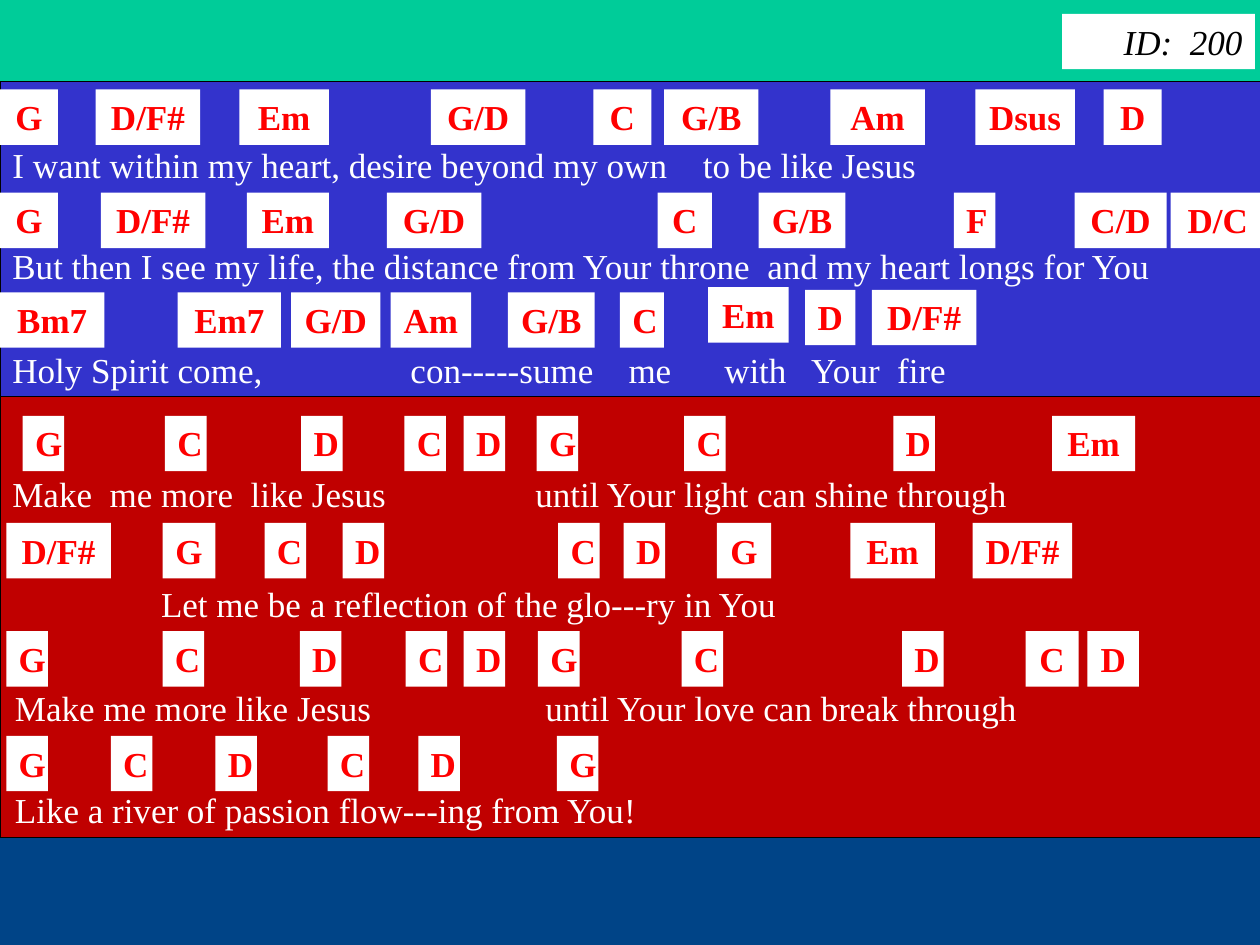
import pptx
import pptx.util
import pptx.dml.color
import pptx.enum.shapes
import pptx.enum.text
import pptx.oxml.ns
from lxml import etree

COLORS = {
    "page": "004487", "header": "00CC99", "verse": "3333CC", "chorus": "C00000",
    "white": "FFFFFF", "chord": "FF0000", "black": "000000",
}
FONT = "Times New Roman"
LINE_HEIGHT = 0.44
NARROW = 0.33

BANDS = [
    ("verse", 0, 0.65, 10.01, 2.5),
    ("chorus", 0, 3.15, 10.01, 3.5),
    ("header", -0.02, -0.02, 10.03, 0.67),
]

# LYRICS
LYRICS = [
    (0, 1.09, 0, [("I want within my heart, desire beyond my own", None),
                  ("to be like Jesus", 5.48)]),
    (0, 1.89, 0, [("But then I see my life, the distance from Your throne  "
                   "and my heart longs for You", None)]),
    (0, 2.72, 0, [("Holy Spirit come,", None), ("con-----sume", 3.16),
                  ("me", 4.89), ("with", 5.65), ("Your  fire", 6.34)]),
    (0, 3.7, 0, [("Make  me more  like Jesus", None),
                 ("until Your light can shine through", 4.15)]),
    (0, 4.57, 1.18, [("Let me be a reflection of the glo---ry in You", None)]),
    (0.02, 5.4, 0, [("Make me more like Jesus", None),
                    ("until Your love can break through", 4.21)]),
    (0.02, 6.21, 0, [("Like a river of passion flow---ing from You!", None)]),
]

CHORD_ROWS = [
    (0.71, [("G", 0, 0.46), ("D/F#", 0.76, 0.83), ("Em", 1.9, 0.71),
            ("G/D", 3.42, 0.75), ("C", 4.71, 0.46), ("G/B", 5.27, 0.75),
            ("Am", 6.59, 0.75), ("Dsus", 7.74, 0.79), ("D", 8.76, 0.46)]),
    (1.53, [("G", 0, 0.46), ("D/F#", 0.8, 0.83), ("Em", 1.96, 0.65),
            ("G/D", 3.07, 0.75), ("C", 5.22, 0.43), ("G/B", 6.02, 0.69),
            ("F", 7.57, NARROW), ("C/D", 8.53, 0.73), ("D/C", 9.29, 0.75)]),
    (2.32, [("Bm7", 0, 0.83), ("Em7", 1.41, 0.82), ("G/D", 2.31, 0.71),
            ("Am", 3.1, 0.64), ("G/B", 4.03, 0.69), ("C", 4.92, 0.35)]),
    (2.28, [("Em", 5.62, 0.64)]),
    (2.3, [("D", 6.39, 0.4), ("D/F#", 6.92, 0.83)]),
    (3.3, [("G", 0.18, NARROW), ("C", 1.31, NARROW), ("D", 2.39, NARROW),
           ("C", 3.21, NARROW), ("D", 3.68, NARROW), ("G", 4.26, NARROW),
           ("C", 5.43, NARROW), ("D", 7.09, NARROW), ("Em", 8.35, 0.66)]),
    (4.15, [("D/F#", 0.05, 0.83), ("G", 1.29, 0.42), ("C", 2.1, NARROW),
            ("D", 2.72, NARROW), ("C", 4.43, NARROW), ("D", 4.95, NARROW),
            ("G", 5.69, 0.43), ("Em", 6.75, 0.67), ("D/F#", 7.72, 0.79)]),
    (5.01, [("G", 0.05, NARROW), ("C", 1.29, NARROW), ("D", 2.38, NARROW),
            ("C", 3.22, NARROW), ("D", 3.68, NARROW), ("G", 4.27, NARROW),
            ("C", 5.41, NARROW), ("D", 7.16, NARROW), ("C", 8.14, 0.42),
            ("D", 8.63, 0.41)]),
    (5.84, [("G", 0.05, NARROW), ("C", 0.88, NARROW), ("D", 1.71, NARROW),
            ("C", 2.6, NARROW), ("D", 3.32, NARROW), ("G", 4.42, NARROW)]),
]


def rgb(name):
    return pptx.dml.color.RGBColor.from_string(COLORS[name])


def inches(*lengths):
    return [pptx.util.Inches(length) for length in lengths]


def add_rectangle(page, fill, left, top, width, height, outlined=False):
    box = page.shapes.add_shape(pptx.enum.shapes.MSO_SHAPE.RECTANGLE,
                                *inches(left, top, width, height))
    box.shadow.inherit = False
    box.fill.solid()
    box.fill.fore_color.rgb = rgb(fill)
    if outlined:
        box.line.color.rgb = rgb("black")
        box.line.width = pptx.util.Pt(0.75)
    else:
        box.line.fill.background()
    return box


def write(box, segments, color, align, bold=False, italic=False, indent=0):
    frame = box.text_frame
    frame.word_wrap = True
    frame.auto_size = pptx.enum.text.MSO_AUTO_SIZE.SHAPE_TO_FIT_TEXT
    frame.vertical_anchor = pptx.enum.text.MSO_ANCHOR.TOP
    para = frame.paragraphs[0]
    para.alignment = align
    qn = pptx.oxml.ns.qn
    props = para._p.get_or_add_pPr()
    if indent:
        props.set("marL", str(pptx.util.Inches(indent)))
    before = etree.SubElement(props, qn("a:spcBef"))
    etree.SubElement(before, qn("a:spcPct"), val="50000")
    stops = [stop for _, stop in segments if stop is not None]
    if stops:
        tabs = etree.SubElement(props, qn("a:tabLst"))
        for stop in stops:
            etree.SubElement(tabs, qn("a:tab"), pos=str(pptx.util.Inches(stop)), algn="l")
    for text, stop in segments:
        span = para.add_run()
        span.text = text if stop is None else "\t" + text
        span.font.name = FONT
        span.font.size = pptx.util.Pt(20)
        span.font.bold = bold
        span.font.italic = italic
        span.font.color.rgb = rgb(color)


def main():
    align = pptx.enum.text.PP_ALIGN
    deck = pptx.Presentation()
    deck.slide_width, deck.slide_height = inches(10, 7.5)
    page = deck.slides.add_slide(deck.slide_layouts[6])
    page.background.fill.solid()
    page.background.fill.fore_color.rgb = rgb("page")

    for fill, *place in BANDS:
        add_rectangle(page, fill, *place, outlined=True)
    for left, top, indent, segments in LYRICS:
        box = page.shapes.add_textbox(*inches(left, top, 10 - left, LINE_HEIGHT))
        write(box, segments, "white", align.LEFT, indent=indent)
    for top, chords in CHORD_ROWS:
        for chord, left, width in chords:
            box = add_rectangle(page, "white", left, top, width, LINE_HEIGHT)
            write(box, [(chord, None)], "chord", align.CENTER, bold=True)
    box = add_rectangle(page, "white", 8.43, 0.11, 1.53, LINE_HEIGHT)
    write(box, [("ID:  200", None)], "black", align.RIGHT, italic=True)

    deck.save("out.pptx")


if __name__ == "__main__":
    main()
